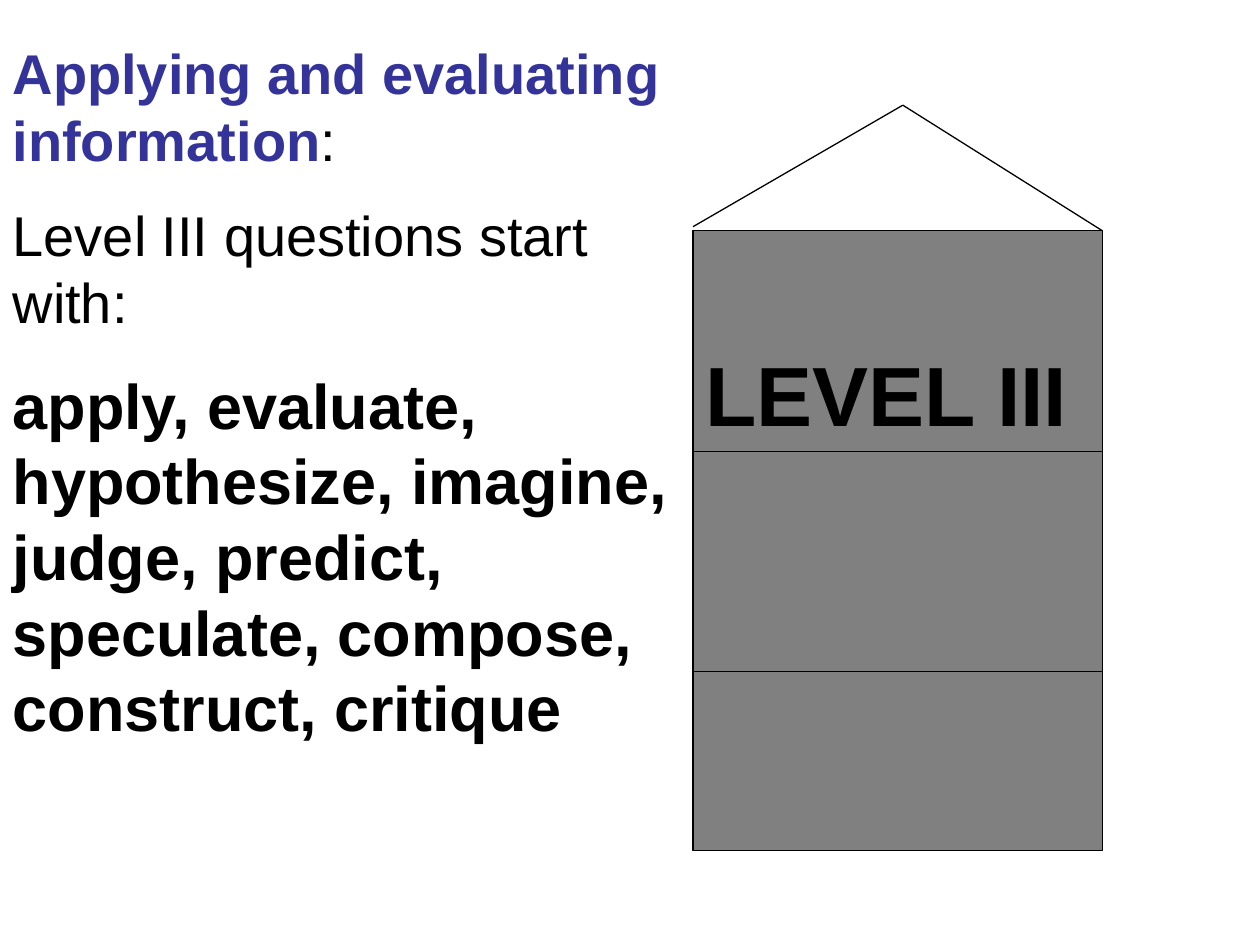
import pptx
import pptx.dml.color
import pptx.enum.shapes
import pptx.enum.text
import pptx.util
from lxml import etree
from pptx.oxml.ns import qn

BLACK = pptx.dml.color.RGBColor(0x00, 0x00, 0x00)
GRAY = pptx.dml.color.RGBColor(0x80, 0x80, 0x80)
INDIGO = pptx.dml.color.RGBColor(0x33, 0x33, 0x99)
Cm = pptx.util.Cm
Pt = pptx.util.Pt


class SlideBuilder:
    """Holds the common style and the current slide."""

    font_name = "Arial"
    line_color = BLACK
    line_width = Pt(0.75)

    def __init__(self, slide):
        self.slide = slide

    def outline(self, shape):
        shape.line.color.rgb = self.line_color
        shape.line.width = self.line_width

    def rectangle(self, left, top, width, height, color):
        shape = self.slide.shapes.add_shape(
            pptx.enum.shapes.MSO_SHAPE.RECTANGLE,
            Cm(left), Cm(top), Cm(width), Cm(height))
        shape.shadow.inherit = False
        shape.fill.solid()
        shape.fill.fore_color.rgb = color
        self.outline(shape)

    def line(self, start, end):
        connector = self.slide.shapes.add_connector(
            pptx.enum.shapes.MSO_CONNECTOR.STRAIGHT,
            Cm(start[0]), Cm(start[1]), Cm(end[0]), Cm(end[1]))
        self.outline(connector)
        etree.SubElement(connector._element.spPr, qn("a:effectLst"))

    def text_box(self, left, top, width, height, paragraphs):
        shape = self.slide.shapes.add_textbox(
            Cm(left), Cm(top), Cm(width), Cm(height))
        self.fill_text(shape.text_frame, paragraphs)

    def body(self, left, top, width, height, paragraphs):
        shape = self.slide.placeholders[1]
        frame = {"left": left, "top": top, "width": width, "height": height}
        for name, value in frame.items():
            setattr(shape, name, Cm(value))
        self.fill_text(shape.text_frame, paragraphs)
        for paragraph in shape.text_frame.paragraphs:
            properties = paragraph._p.get_or_add_pPr()
            properties.set("marL", "0")
            properties.set("indent", "0")
            etree.SubElement(properties, qn("a:buNone"))

    def fill_text(self, text_frame, paragraphs):
        text_frame.word_wrap = True
        text_frame.auto_size = pptx.enum.text.MSO_AUTO_SIZE.NONE
        text_frame.vertical_anchor = pptx.enum.text.MSO_ANCHOR.TOP
        for index, (size, runs) in enumerate(paragraphs):
            paragraph = (text_frame.add_paragraph() if index
                         else text_frame.paragraphs[0])
            paragraph.space_before = Pt(size / 2)
            for text, bold, color in runs:
                run = paragraph.add_run()
                run.text = text
                run.font.color.rgb = color
                formats = {"name": self.font_name, "size": Pt(size), "bold": bold}
                for name, value in formats.items():
                    setattr(run.font, name, value)


def main():
    presentation = pptx.Presentation()
    presentation.slide_width = Cm(25.4)
    presentation.slide_height = Cm(19.05)
    slide = presentation.slides.add_slide(presentation.slide_layouts[1])
    title = slide.shapes.title._element
    title.getparent().remove(title)
    builder = SlideBuilder(slide)

    # Question words
    builder.body(0, 0.64, 13.76, 14.73, [
        (32, [("Applying and evaluating information", True, INDIGO),
              (":", False, BLACK)]),
        (32, [("Level III questions start with:", False, BLACK)]),
        (36, [("apply, evaluate, hypothesize, imagine, judge, predict, "
               "speculate, compose, construct, critique", True, BLACK)]),
    ])

    # House walls and floors
    left, top, width, height = 13.97, 4.65, 8.25, 12.5
    right = left + width
    builder.rectangle(left, top, width, height, GRAY)
    for floor in (13.54, 9.1):
        builder.line((left, floor), (right, floor))

    # Top floor label
    builder.text_box(left, 6.78, 8.05, 2.29,
                     [(48, [("LEVEL III", True, BLACK)])])

    # Roof
    peak = (18.2, 2.12)
    builder.line((left, 4.57), peak)
    builder.line(peak, (right, top))

    presentation.save("out.pptx")


if __name__ == "__main__":
    main()
